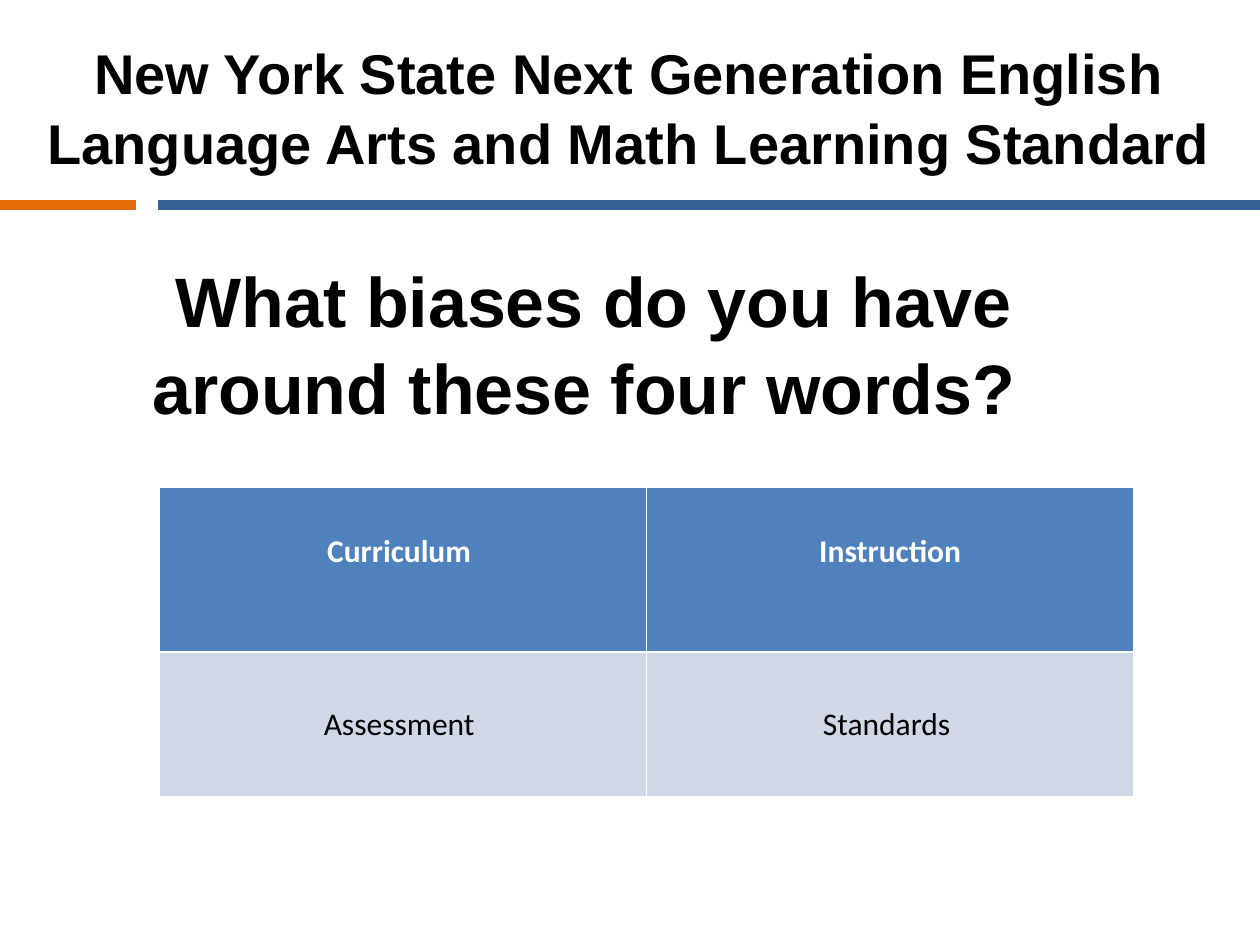
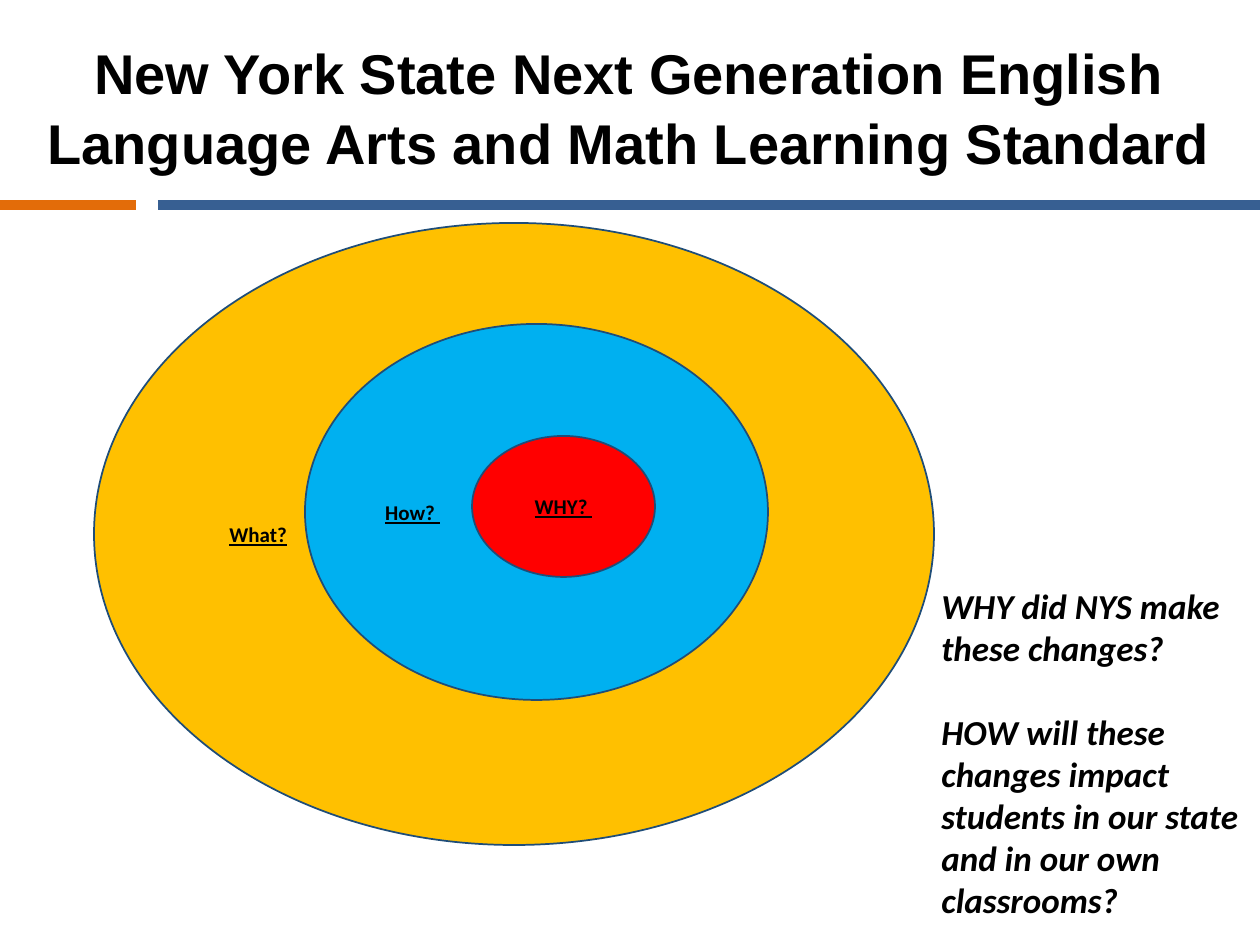
import pptx
import pptx.util
import pptx.dml.color
import pptx.enum.shapes
import pptx.enum.text
import pptx.oxml.ns
import lxml.etree

RGB = pptx.dml.color.RGBColor
BLACK = RGB(0x00, 0x00, 0x00)
WHITE = RGB(0xFF, 0xFF, 0xFF)
NAVY = RGB(0x37, 0x5F, 0x92)
ORANGE = RGB(0xE3, 0x6C, 0x09)
BLUE = RGB(0x4F, 0x81, 0xBD)
PALE = RGB(0xD0, 0xD8, 0xE8)
GOLD = RGB(0xFF, 0xC0, 0x00)
SKY = RGB(0x00, 0xB0, 0xF0)
RED = RGB(0xFF, 0x00, 0x00)
EDGE = RGB(0x1F, 0x4D, 0x78)

SCALE = 914400 / 126
WIDE, HIGH = 1260, 945
TITLE = "New York State Next Generation English Language Arts and Math Learning Standard"
CENTER = pptx.enum.text.PP_ALIGN.CENTER
LEFT = pptx.enum.text.PP_ALIGN.LEFT
MIDDLE = pptx.enum.text.MSO_ANCHOR.MIDDLE
TOP = pptx.enum.text.MSO_ANCHOR.TOP


def px(n):
    """Turn px into EMU."""
    return pptx.util.Emu(round(n * SCALE))


def style(para, size, face="Calibri", color=BLACK, bold=True, align=LEFT):
    """Format one paragraph."""
    para.alignment = align
    font = para.font
    font.size = pptx.util.Pt(size)
    font.name = face
    font.bold = bold
    font.color.rgb = color


def fill_holder(holder, box, text, size, anchor):
    """Move a placeholder to its box and give it a centred bold heading."""
    holder.left, holder.top, holder.width, holder.height = map(px, box)
    frame = holder.text_frame
    frame.text = text
    frame.word_wrap = True
    frame.auto_size = pptx.enum.text.MSO_AUTO_SIZE.NONE
    frame.vertical_anchor = anchor
    frame.margin_left = frame.margin_right = 0
    frame.margin_top = frame.margin_bottom = 0
    para = frame.paragraphs[0]
    props = para._p.get_or_add_pPr()
    props.set("marL", "0")
    props.set("indent", "0")
    lxml.etree.SubElement(props, pptx.oxml.ns.qn("a:buNone"))
    style(para, size, "Arial", align=CENTER)
    para.line_spacing = 1.04
    para.space_before = pptx.util.Pt(0)


def add_rule(slide, start, end, y, color):
    """Draw one part of the band below the title."""
    kind = pptx.enum.shapes.MSO_CONNECTOR.STRAIGHT
    rule = slide.shapes.add_connector(kind, px(start), px(y), px(end), px(y))
    rule.line.color.rgb = color
    rule.line.width = pptx.util.Pt(5.28)
    lxml.etree.SubElement(rule._element.spPr, pptx.oxml.ns.qn("a:effectLst"))


def add_slide(deck, layout):
    """Add a slide with the shared title and band."""
    slide = deck.slides.add_slide(deck.slide_layouts[layout])
    add_rule(slide, 158, WIDE, 205, NAVY)
    add_rule(slide, 0, 136, 205, ORANGE)
    fill_holder(slide.shapes.title, (31, 38, 1196, 136), TITLE, 32, MIDDLE)
    return slide


def add_words(slide, box):
    """Draw the table of four words."""
    rows = [["Curriculum ", "Instruction"], ["Assessment ", "Standards "]]
    looks = [(165, BLUE, WHITE, True, 42), (145, PALE, BLACK, False, 6)]
    table = slide.shapes.add_table(2, 2, *map(px, box)).table
    for r, (high, back, ink, bold, below) in enumerate(looks):
        table.rows[r].height = px(high)
        for c, word in enumerate(rows[r]):
            cell = table.cell(r, c)
            cell.text = word
            cell.fill.solid()
            cell.fill.fore_color.rgb = back
            cell.vertical_anchor = MIDDLE
            cell.margin_bottom = px(below)
            style(cell.text_frame.paragraphs[0], 18, color=ink, bold=bold, align=CENTER)


def add_ring(slide, box, color, text, align):
    """Draw one labelled ring."""
    kind = pptx.enum.shapes.MSO_SHAPE.FLOWCHART_CONNECTOR
    ring = slide.shapes.add_shape(kind, *map(px, box))
    ring.shadow.inherit = False
    ring.fill.solid()
    ring.fill.fore_color.rgb = color
    ring.line.color.rgb = EDGE
    ring.line.width = pptx.util.Pt(1)
    frame = ring.text_frame
    frame.text = text
    frame.word_wrap = True
    frame.vertical_anchor = MIDDLE
    style(frame.paragraphs[0], 12, align=align)
    frame.paragraphs[0].font.underline = True


def add_rings(slide, box):
    """Draw the three nested rings from the outside in."""
    left, top, wide, high = box
    add_ring(slide, box, GOLD, "What?", LEFT)
    add_ring(slide, (left + 211, top + 101, 463, 376), SKY, "How? ", LEFT)
    add_ring(slide, (left + 378, top + 213, 183, 141), RED, "WHY? ", CENTER)


def add_asks(slide, box):
    """Write the two questions beside the rings."""
    asks = ["WHY did NYS make these changes?",
            "HOW will these changes impact students in our state and in our own classrooms?"]
    frame = slide.shapes.add_textbox(*map(px, box)).text_frame
    frame.word_wrap = True
    frame.text = "\n".join(asks)
    for para in frame.paragraphs:
        style(para, 20)
        para.font.italic = True
    frame.paragraphs[1].space_before = pptx.util.Pt(24)


def make_words(deck):
    """Build the slide on the four words."""
    slide = add_slide(deck, 1)
    ask = "What biases do you have around these four words? "
    fill_holder(slide.placeholders[1], (53, 254, 1081, 170), ask, 40, TOP)
    add_words(slide, (159, 487, 975, 310))


def make_rings(deck):
    """Build the slide on why, how and what."""
    slide = add_slide(deck, 5)
    add_asks(slide, (929, 578, 331, 351))
    add_rings(slide, (94, 223, 840, 622))


def main():
    """Build and save the deck."""
    deck = pptx.Presentation()
    deck.slide_width, deck.slide_height = px(WIDE), px(HIGH)
    make_words(deck)
    make_rings(deck)
    deck.save("out.pptx")


if __name__ == "__main__":
    main()
